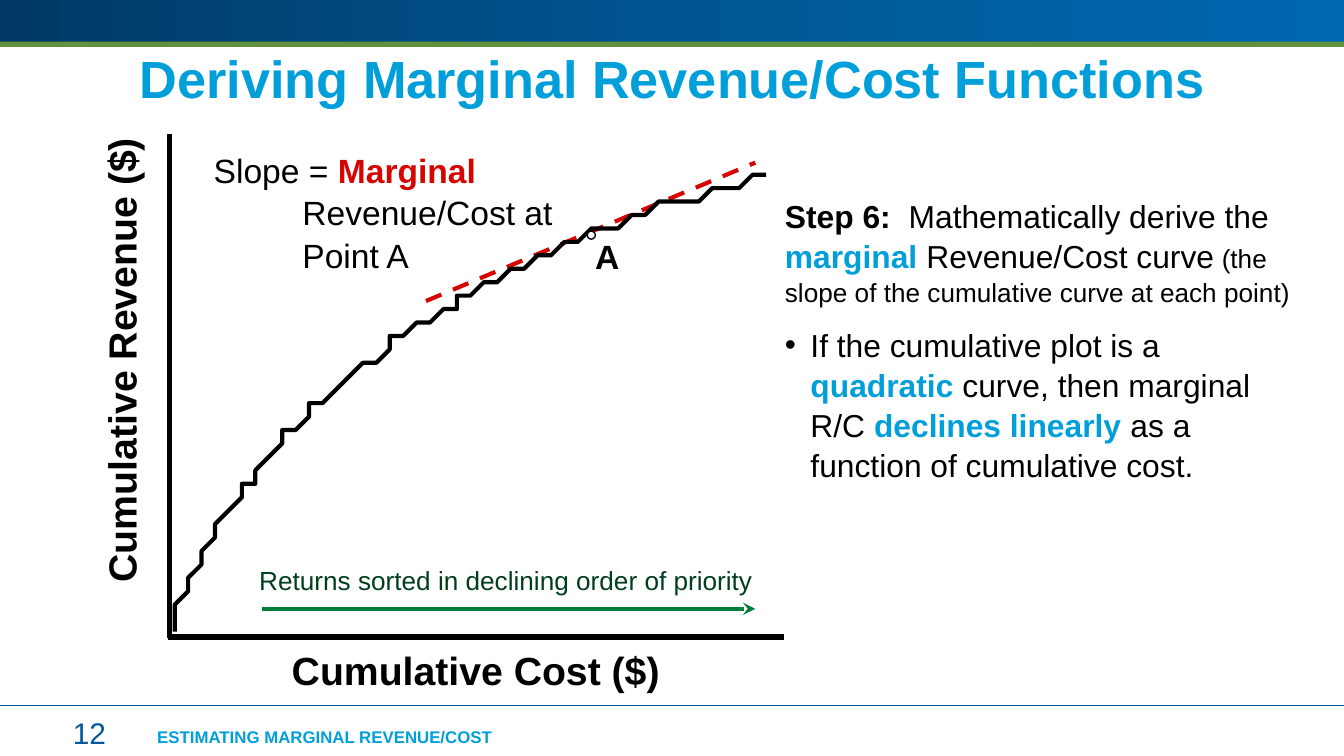
from copy import deepcopy

from pptx import Presentation, util as u
from pptx.dml.color import RGBColor
from pptx.enum import dml, shapes, text
from pptx.oxml import ns
from lxml import etree

rgb = RGBColor.from_string
BLACK, SKY, RED, NAVY, GREEN = "000000", "009FDA", "D50601", "00599C", "007E39"

# Grid of 100 columns by 56.25 rows, square cells
prs = Presentation()
prs.slide_width, prs.slide_height = u.Inches(10), u.Inches(5.625)
cell = prs.slide_width / 100
slide = prs.slides.add_slide(prs.slide_layouts[1])


def grid(*cells):
    return [round(n * cell) for n in cells]


def write(paragraph, runs, size, align=text.PP_ALIGN.LEFT, spacing=1.0):
    """Fill a paragraph with (text, colour, bold[, size]) runs."""
    paragraph.alignment, paragraph.line_spacing = align, spacing
    paragraph.font.name, paragraph.font.size = "Arial", u.Pt(size)
    if len(runs) == 1:
        words, colour, bold = runs[0]
        paragraph.font.bold, paragraph.font.color.rgb = bold, rgb(colour)
        paragraph.add_run().text = words
        return
    for words, colour, bold, *own_size in runs:
        run = paragraph.add_run()
        run.text, run.font.bold = words, bold
        run.font.color.rgb = rgb(colour)
        if own_size:
            run.font.size = u.Pt(own_size[0])


# Header band and green rule
band, rule = [
    slide.shapes.add_shape(shapes.MSO_SHAPE.RECTANGLE, *grid(0, top, 100, height))
    for top, height in ((0, 3.1), (3.1, 0.4))
]
for strip in (band, rule):
    strip.shadow.inherit = False
    strip.line.fill.background()
rule.fill.solid()
rule.fill.fore_color.rgb = rgb("61913D")
band.fill.gradient()
band.fill.gradient_angle = 0
stop_list = band._element.find(".//" + ns.qn("a:gsLst"))
stop_list.insert(1, deepcopy(stop_list[0]))
for stop, position, colour in zip(
    band.fill.gradient_stops, (0, 0.5, 1), ("003965", "005693", "0068B0")
):
    stop.position, stop.color.rgb = position, rgb(colour)

# Title
title = slide.shapes.title
title.left, title.top, title.width, title.height = grid(5, 2.9, 90, 6.5)
frame = title.text_frame
frame.margin_left = frame.margin_top = frame.margin_right = frame.margin_bottom = 0
frame.vertical_anchor = text.MSO_ANCHOR.MIDDLE
frame.auto_size = text.MSO_AUTO_SIZE.NONE
write(frame.paragraphs[0], [("Deriving Marginal Revenue/Cost Functions", SKY, True)],
      28, text.PP_ALIGN.CENTER, 0.85)

# Step 6 explanation
step = slide.placeholders[1]
step.left, step.top, step.width, step.height = grid(57.5, 14.1, 40.1, 21.9)
frame = step.text_frame
frame.margin_left = frame.margin_right = u.Inches(0.09)
frame.margin_top = frame.margin_bottom = u.Inches(0.04)
frame.auto_size = text.MSO_AUTO_SIZE.NONE
intro, quadratic = frame.paragraphs[0], frame.add_paragraph()
for paragraph, indent, bullet in ((intro, 0, None), (quadratic, 1.9, "•")):
    props = paragraph._p.get_or_add_pPr()
    props.set("marL", str(round(indent * cell)))
    props.set("indent", str(-round(indent * cell)))
    mark = etree.SubElement(props, ns.qn("a:buChar" if bullet else "a:buNone"))
    if bullet:
        mark.set("char", bullet)
intro.space_before, quadratic.space_before = u.Pt(0), u.Pt(8.5)
write(intro, [
    ("Step 6:  ", BLACK, True),
    ("Mathematically derive the ", BLACK, False),
    ("marginal", SKY, True),
    (" Revenue/Cost curve", BLACK, False),
    (" (the slope of the cumulative curve at each point)", BLACK, False, 14),
], 17, spacing=1.05)
write(quadratic, [
    ("If the cumulative plot is a ", BLACK, False),
    ("quadratic", SKY, True),
    (" curve, then marginal R/C ", BLACK, False),
    ("declines linearly ", SKY, True),
    ("as a function of cumulative cost.", BLACK, False),
], 17, spacing=1.05)

# Tangent, axes, priority arrow and footer rule
for ends, colour, weight, dash, arrow in (
    ((31.7, 22.4, 56.2, 12.1), RED, 2.25, True, False),
    ((12.6, 10, 12.6, 47.5), BLACK, 3, False, False),
    ((12.5, 47.4, 58.3, 47.4), BLACK, 3, False, False),
    ((19.5, 45.3, 56.2, 45.3), GREEN, 2.25, False, True),
    ((0, 52.5, 100, 52.5), NAVY, 0.75, False, False),
):
    stroke = slide.shapes.add_connector(shapes.MSO_CONNECTOR.STRAIGHT, *grid(*ends))
    stroke.line.color.rgb, stroke.line.width = rgb(colour), u.Pt(weight)
    if dash:
        stroke.line.dash_style = dml.MSO_LINE.DASH
    if arrow:
        etree.SubElement(stroke.line._get_or_add_ln(), ns.qn("a:tailEnd"), type="stealth")
    etree.SubElement(stroke._element.spPr, ns.qn("a:effectLst"))

# Cumulative curve: cubic Bézier from the upper right down to the origin
controls = ((57.3, 13.1), (33.8, 18.9), (16.9, 31.9), (12.6, 47.4))
steps = 60
points = []
for i in range(steps + 1):
    t = i / steps
    weights = ((1 - t) ** 3, 3 * t * (1 - t) ** 2, 3 * t * t * (1 - t), t ** 3)
    points.append([sum(w * p[axis] for w, p in zip(weights, controls)) for axis in (0, 1)])
builder = slide.shapes.build_freeform(*points[0], scale=cell)
builder.add_line_segments(points[1:], close=False)
curve = builder.convert_to_shape()
curve.shadow.inherit = False
curve.fill.background()
curve.line.color.rgb, curve.line.width = rgb(BLACK), u.Pt(2.25)

# Point A
point_a = slide.shapes.add_shape(shapes.MSO_SHAPE.OVAL, *grid(43.7, 17.2, 0.6, 0.6))
point_a.shadow.inherit = False
point_a.fill.solid()
point_a.fill.fore_color.rgb = rgb("FFFFFF")
point_a.line.color.rgb, point_a.line.width = rgb(BLACK), u.Pt(0.75)

# Labels: box, side and top margins, rotation, hanging indent, runs, size, align, spacing
LEFT, CENTER = text.PP_ALIGN.LEFT, text.PP_ALIGN.CENTER
for box, (side, edge), rotation, hang, runs, size, align, spacing in (
    ((15, 10.6, 28.1, 10), (0.9, 0.4), 0, 6.6,
     [("Slope = ", BLACK, False), ("Marginal", RED, True),
      (" Revenue/Cost at Point A", BLACK, False)], 18, LEFT, 1.05),
    ((-9, 24.4, 36.1, 4.8), (1.3, 0.6), 270, 0,
     [("Cumulative Revenue ($)", BLACK, True)], 21, CENTER, 1.0),
    ((12.9, 47.5, 45, 4.8), (1.3, 0.6), 0, 0,
     [("Cumulative Cost ($)", BLACK, True)], 21, CENTER, 1.0),
    ((43.3, 17.1, 4.2, 4), (1, 0.5), 0, 0, [("A", BLACK, True)], 18, LEFT, 1.0),
    ((18.3, 41.5, 38.9, 3.4), (1, 0.5), 0, 0,
     [("Returns sorted in declining order of priority", "003E1C", False)], 14, LEFT, 1.0),
    ((2.5, 53.2, 8.3, 2.5), (0, 0), 0, 0, [("12", NAVY, False)], 16, CENTER, 1.0),
    ((10.8, 53.7, 70, 2.5), (0.9, 0.4), 0, 0,
     [("ESTIMATING MARGINAL REVENUE/COST", SKY, True)], 9, LEFT, 1.0),
):
    label = slide.shapes.add_textbox(*grid(*box))
    label.rotation = rotation
    frame = label.text_frame
    frame.word_wrap = True
    frame.margin_left = frame.margin_right = round(side * cell)
    frame.margin_top = frame.margin_bottom = round(edge * cell)
    if hang:
        props = frame.paragraphs[0]._p.get_or_add_pPr()
        props.set("marL", str(round(hang * cell)))
        props.set("indent", str(-round(hang * cell)))
    write(frame.paragraphs[0], runs, size, align, spacing)

prs.save("out.pptx")
